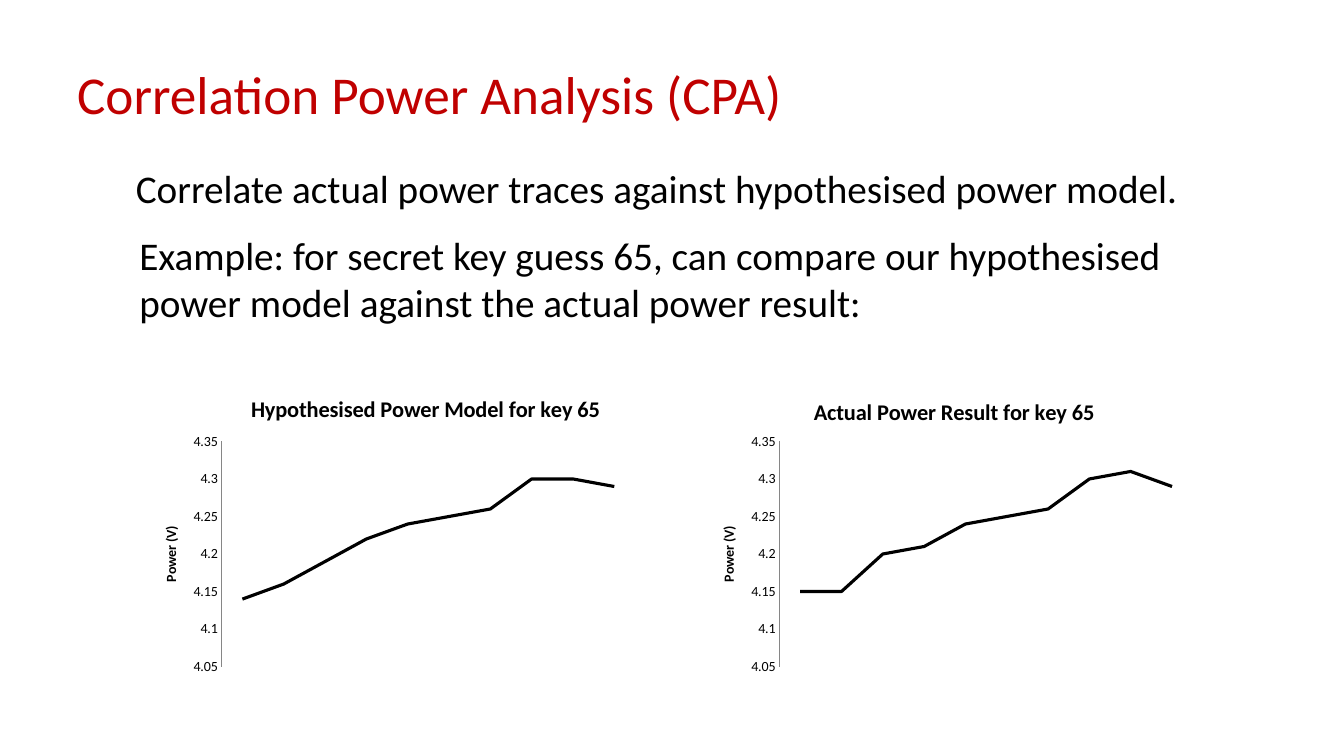
from dataclasses import dataclass

import lxml.etree
import pptx
import pptx.chart.chart
import pptx.chart.data
import pptx.dml.color
import pptx.enum.chart
import pptx.enum.text
import pptx.oxml.ns
import pptx.slide
import pptx.text.text
import pptx.util

COLUMNS, ROWS = 160, 90
SLIDE_WIDTH = pptx.util.Inches(13.33)
SLIDE_HEIGHT = pptx.util.Inches(7.5)


@dataclass(frozen=True)
class Theme:
    font: str = "Calibri"
    heading: str = "C00000"
    ink: str = "000000"
    axis: str = "868686"
    background: str = "FFFFFF"
    heading_size: float = 38
    body_size: float = 28
    chart_title_size: float = 16
    axis_size: float = 10
    trace_width: float = 2.25
    axis_width: float = 0.75


@dataclass(frozen=True)
class Box:
    """A place on the slide, in grid columns and rows."""
    column: float
    row: float
    columns: float
    rows: float

    def lengths(self) -> tuple[int, int, int, int]:
        across, down = SLIDE_WIDTH / COLUMNS, SLIDE_HEIGHT / ROWS
        return (round(self.column * across), round(self.row * down),
                round(self.columns * across), round(self.rows * down))


@dataclass(frozen=True)
class TextBlock:
    text: str
    box: Box
    size: float
    color: str
    anchor: pptx.enum.text.MSO_ANCHOR = pptx.enum.text.MSO_ANCHOR.TOP


@dataclass(frozen=True)
class PowerChart:
    title: str
    volts: tuple[float, ...]
    title_left: float
    title_top: float


THEME = Theme()
TEXT_BLOCKS = (
    TextBlock("Correlation Power Analysis (CPA)", Box(8, 3.6, 144, 15),
              THEME.heading_size, THEME.heading, pptx.enum.text.MSO_ANCHOR.MIDDLE),
    TextBlock("Correlate actual power traces against hypothesised power model.",
              Box(15, 19, 135.6, 6.8), THEME.body_size, THEME.ink),
    TextBlock("Example: for secret key guess 65, can compare our hypothesised "
              "power model against the actual power result:",
              Box(15.4, 26.9, 135.6, 12.5), THEME.body_size, THEME.ink),
)
POWER_CHARTS = (
    PowerChart("Hypothesised Power Model for key 65",
               (4.14, 4.16, 4.19, 4.22, 4.24, 4.25, 4.26, 4.3, 4.3, 4.29), 0.21, 0.04),
    PowerChart("Actual Power Result for key 65",
               (4.15, 4.15, 4.2, 4.21, 4.24, 4.25, 4.26, 4.3, 4.31, 4.29), 0.22, 0.05),
)
FIRST_CHART = Box(16.8, 45, 60, 36)
CHART_PITCH = 66.4


def rgb(color: str) -> pptx.dml.color.RGBColor:
    return pptx.dml.color.RGBColor.from_string(color)


def write_text(frame: pptx.text.text.TextFrame, text: str, *, size: float,
               color: str, bold: bool = False) -> None:
    paragraph = frame.paragraphs[0]
    run = paragraph.add_run()
    run.text = text
    run.font.name = THEME.font
    run.font.size = pptx.util.Pt(size)
    run.font.bold = bold
    run.font.color.rgb = rgb(color)


def add_text_block(slide: pptx.slide.Slide, block: TextBlock) -> None:
    frame = slide.shapes.add_textbox(*block.box.lengths()).text_frame
    frame.word_wrap = True
    frame.vertical_anchor = block.anchor
    write_text(frame, block.text, size=block.size, color=block.color)


def set_layout(chart: pptx.chart.chart.Chart, query: str, index: int,
               **settings: str | float) -> None:
    """Give a chart part a manual layout, as shares of the chart's size."""
    part = chart._chartSpace.xpath(query)[0]
    tag = pptx.oxml.ns.qn
    for old_layout in part.findall(tag("c:layout")):
        part.remove(old_layout)
    layout = lxml.etree.Element(tag("c:layout"))
    manual = lxml.etree.SubElement(layout, tag("c:manualLayout"))
    for name, value in settings.items():
        lxml.etree.SubElement(manual, tag(f"c:{name}")).set("val", str(value))
    part.insert(index, layout)


def add_power_chart(slide: pptx.slide.Slide, power: PowerChart, box: Box) -> None:
    data = pptx.chart.data.CategoryChartData()
    data.categories = [str(number) for number in range(1, len(power.volts) + 1)]
    data.add_series("Series 1", power.volts)
    chart = slide.shapes.add_chart(
        pptx.enum.chart.XL_CHART_TYPE.LINE, *box.lengths(), data).chart
    chart.has_legend = False
    chart.font.name = THEME.font
    chart.font.size = pptx.util.Pt(THEME.axis_size)
    chart.font.color.rgb = rgb(THEME.ink)

    chart.has_title = True
    write_text(chart.chart_title.text_frame, power.title,
               size=THEME.chart_title_size, color=THEME.ink, bold=True)
    set_layout(chart, "c:chart/c:title", 1, xMode="edge", yMode="edge",
               x=power.title_left, y=power.title_top)
    set_layout(chart, "c:chart/c:plotArea", 0, layoutTarget="inner",
               xMode="edge", yMode="edge", x=0.16, y=0.21, w=0.82, h=0.745)

    chart.category_axis.visible = False
    axis = chart.value_axis
    axis.has_major_gridlines = False
    axis.major_tick_mark = pptx.enum.chart.XL_TICK_MARK.NONE
    axis.minimum_scale, axis.maximum_scale, axis.major_unit = 4.05, 4.35, 0.05
    axis.format.line.color.rgb = rgb(THEME.axis)
    axis.format.line.width = pptx.util.Pt(THEME.axis_width)
    axis_title = axis.axis_title.text_frame
    write_text(axis_title, "Power (V)", size=THEME.axis_size, color=THEME.ink, bold=True)
    axis_title._txBody.bodyPr.set("rot", "-5400000")
    axis_title._txBody.bodyPr.set("vert", "horz")

    chart.plots[0].vary_by_categories = False
    trace = chart.plots[0].series[0]
    trace.smooth = False
    trace.marker.style = pptx.enum.chart.XL_MARKER_STYLE.NONE
    trace.format.line.color.rgb = rgb(THEME.ink)
    trace.format.line.width = pptx.util.Pt(THEME.trace_width)


def main() -> None:
    presentation = pptx.Presentation()
    presentation.slide_width, presentation.slide_height = SLIDE_WIDTH, SLIDE_HEIGHT
    slide = presentation.slides.add_slide(presentation.slide_layouts[6])
    slide.background.fill.solid()
    slide.background.fill.fore_color.rgb = rgb(THEME.background)
    for block in TEXT_BLOCKS:
        add_text_block(slide, block)
    for index, power in enumerate(POWER_CHARTS):
        box = Box(FIRST_CHART.column + index * CHART_PITCH, FIRST_CHART.row,
                  FIRST_CHART.columns, FIRST_CHART.rows)
        add_power_chart(slide, power, box)
    presentation.save("out.pptx")


if __name__ == "__main__":
    main()
